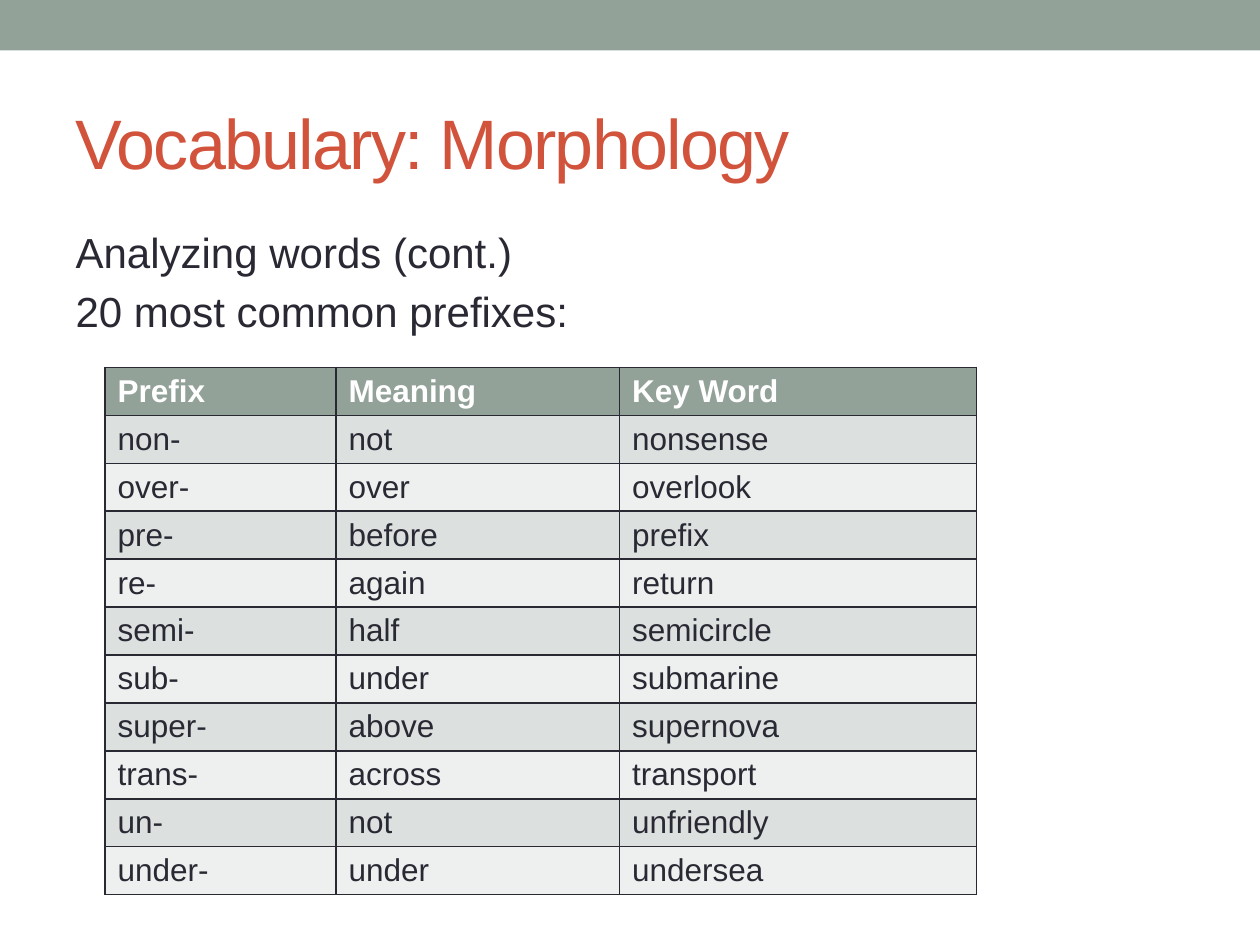
from lxml.etree import SubElement
from pptx import Presentation
from pptx.dml.color import RGBColor
from pptx.enum.shapes import MSO_SHAPE as Shape
from pptx.enum.text import MSO_ANCHOR as Anchor, MSO_AUTO_SIZE as AutoSize, PP_ALIGN as Align
from pptx.oxml.ns import qn
from pptx.util import Pt

COLORS = {
    "sage": "93A299",
    "rust": "D2533C",
    "ink": "292934",
    "white": "FFFFFF",
    "odd_row": "DCE0DE",
    "even_row": "EEF0EF",
}
FONT = "Arial"
INTRO = ["Analyzing words (cont.)", "20 most common prefixes:"]
PREFIXES = [
    ("Prefix", "Meaning", "Key Word"),
    ("non-", "not", "nonsense"),
    ("over-", "over", "overlook"),
    ("pre-", "before", "prefix"),
    ("re-", "again", "return"),
    ("semi-", "half", "semicircle"),
    ("sub-", "under", "submarine"),
    ("super-", "above", "supernova"),
    ("trans-", "across", "transport"),
    ("un-", "not", "unfriendly"),
    ("under-", "under", "undersea"),
]
COLUMN_WIDTHS = [132, 162, 204]
ROW_HEIGHT = 27.4


def color(name):
    return RGBColor.from_string(COLORS[name])


def place(shape, left, top, width, height):
    shape.left, shape.top = Pt(left), Pt(top)
    shape.width, shape.height = Pt(width), Pt(height)


def format_runs(paragraph, size, color_name, bold=False):
    for run in paragraph.runs:
        run.font.name = FONT
        run.font.size = Pt(size)
        run.font.bold = bold
        run.font.color.rgb = color(color_name)


def add_top_band(slide, width):
    band = slide.shapes.add_shape(Shape.RECTANGLE, 0, 0, width, Pt(28.8))
    band.shadow.inherit = False
    band.fill.solid()
    band.fill.fore_color.rgb = color("sage")
    band.line.fill.background()


def fill_title(title, text):
    place(title, 36, 42, 648, 78)
    frame = title.text_frame
    frame.text = text
    frame.auto_size = AutoSize.NONE
    frame.vertical_anchor = Anchor.MIDDLE
    heading = frame.paragraphs[0]
    heading.alignment = Align.LEFT
    format_runs(heading, 40, "rust")
    # Tighten the letters by one point
    for run in heading.runs:
        run.font._element.set("spc", "-100")


def fill_intro(body, lines):
    place(body, 36, 126, 648, 384)
    frame = body.text_frame
    frame.text = "\n".join(lines)
    frame.auto_size = AutoSize.NONE
    for paragraph in frame.paragraphs:
        format_runs(paragraph, 24, "ink")
        # Plain lines: no bullet, no indent
        properties = paragraph._p.get_or_add_pPr()
        properties.set("marL", "0")
        properties.set("indent", "0")
        SubElement(properties, qn("a:buNone"))


def add_borders(cell, color_name, width):
    properties = cell._tc.get_or_add_tcPr()
    for position, side in enumerate(("lnL", "lnR", "lnT", "lnB")):
        border = SubElement(properties, qn(f"a:{side}"), w=str(Pt(width)))
        fill = SubElement(border, qn("a:solidFill"))
        SubElement(fill, qn("a:srgbClr"), val=COLORS[color_name])
        # Borders come before the cell fill
        properties.insert(position, border)


def add_prefix_table(slide, rows):
    table = slide.shapes.add_table(
        len(rows), len(COLUMN_WIDTHS), Pt(60), Pt(210),
        Pt(sum(COLUMN_WIDTHS)), Pt(ROW_HEIGHT * len(rows))).table
    for column, width in zip(table.columns, COLUMN_WIDTHS):
        column.width = Pt(width)
    for index, words in enumerate(rows):
        table.rows[index].height = Pt(ROW_HEIGHT)
        header = index == 0
        row_fill = "sage" if header else "odd_row" if index % 2 else "even_row"
        for cell, word in zip(table.rows[index].cells, words):
            cell.text_frame.text = word
            format_runs(cell.text_frame.paragraphs[0], 18,
                        "white" if header else "ink", bold=header)
            cell.fill.solid()
            cell.fill.fore_color.rgb = color(row_fill)
            add_borders(cell, "ink", 1)


def main():
    deck = Presentation()
    deck.slide_width, deck.slide_height = Pt(720), Pt(540)
    slide = deck.slides.add_slide(deck.slide_layouts[1])
    add_top_band(slide, deck.slide_width)
    fill_title(slide.shapes.title, "Vocabulary: Morphology")
    fill_intro(slide.placeholders[1], INTRO)
    add_prefix_table(slide, PREFIXES)
    deck.save("out.pptx")


if __name__ == "__main__":
    main()
